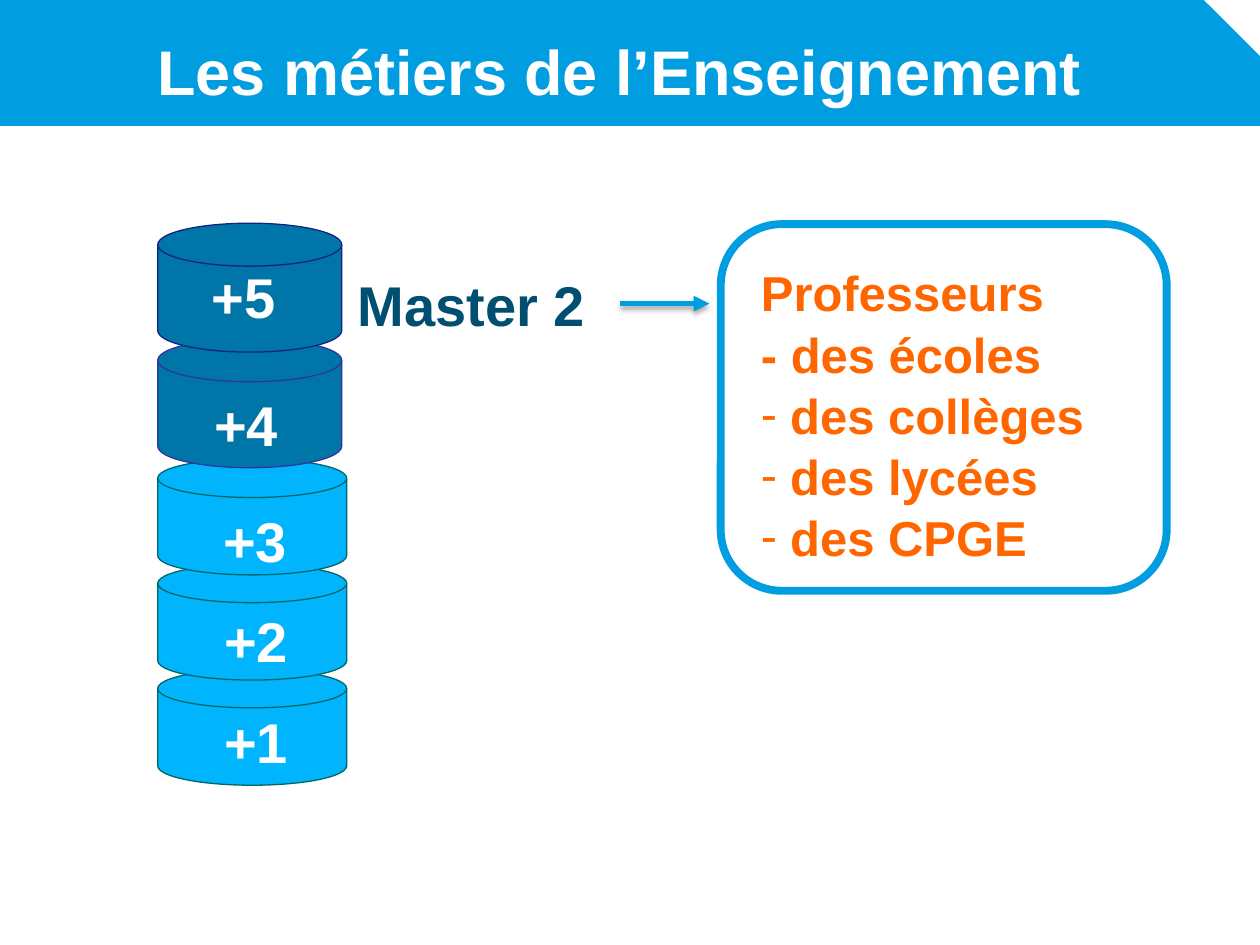
import pptx
import pptx.dml.color
import pptx.enum.shapes
import pptx.enum.text
import pptx.oxml
import pptx.oxml.ns
import pptx.util

Cm, Pt = pptx.util.Cm, pptx.util.Pt
SHAPE = pptx.enum.shapes.MSO_SHAPE
ALIGN = pptx.enum.text.PP_ALIGN

COLORS = {
    "banner": "009DE0", "white": "FFFFFF", "orange": "FF6600", "navy": "004F70",
    "licence": "00B5FE", "licence_line": "006666", "master": "0076A8",
    "m1_line": "333399", "m2_line": "14237B",
}

# label, width, height, top, fill, line, label offset x and y (cm), bottom disk first
LICENCE_STEP = 2.12
DISKS = [
    (f"+{i + 1}", 3.81, 2.34, 8.99 - i * LICENCE_STEP, "licence", "licence_line", dx, dy)
    for i, (dx, dy) in enumerate([(1.09, 0.64), (1.09, 0.74), (1.07, 0.84)])
] + [
    ("+4", 3.71, 2.6, 2.33, "master", "m1_line", 0.89, 0.91),
    ("+5", 3.71, 2.6, 0, "master", "m2_line", 0.84, 0.66),
]


def rgb(name):
    return pptx.dml.color.RGBColor.from_string(COLORS[name])


def xml(text):
    head, sep, rest = text.partition(" ")
    return pptx.oxml.parse_xml(f"{head} {pptx.oxml.ns.nsdecls('a')}{sep}{rest}")


def write(tf, text, size=32, color="white", align=ALIGN.LEFT, wrap=True,
          spacing=None, bullets_from=None):
    """Fill a text frame, one paragraph a line; bullets start at a line index."""
    tf.word_wrap = wrap
    tf.vertical_anchor = pptx.enum.text.MSO_ANCHOR.TOP
    for i, line in enumerate(text.split("\n")):
        p = tf.paragraphs[0] if i == 0 else tf.add_paragraph()
        p.alignment = align
        if spacing:
            p.line_spacing = spacing
        if bullets_from is not None and i >= bullets_from:
            pPr = p._p.get_or_add_pPr()
            pPr.set("marL", str(Cm(0.59)))
            pPr.set("indent", str(-Cm(0.59)))
            pPr.append(xml('<a:buFont typeface="Arial"/>'))
            pPr.append(xml('<a:buChar char="-"/>'))
        r = p.add_run()
        r.text = line
        r.font.name, r.font.size, r.font.bold = "Arial", Pt(size), True
        r.font.color.rgb = rgb(color)


def add_text(s, x, y, w, h, text, **fmt):
    tb = s.shapes.add_textbox(Cm(x), Cm(y), Cm(w), Cm(h))
    write(tb.text_frame, text, **fmt)


def add_shape(s, kind, x, y, w, h, fill=None, line=None, width=0.75):
    sp = s.shapes.add_shape(kind, Cm(x), Cm(y), Cm(w), Cm(h))
    sp.shadow.inherit = False
    if fill:
        sp.fill.solid()
        sp.fill.fore_color.rgb = rgb(fill)
    else:
        sp.fill.background()
    if line:
        sp.line.color.rgb = rgb(line)
        sp.line.width = Pt(width)
    else:
        sp.line.fill.background()
    return sp


def add_banner(s, x, y, w, h):
    sp = add_shape(s, SHAPE.SNIP_1_RECTANGLE, x, y, w, h, fill="banner")
    sp.adjustments[0] = 0.458
    title = s.shapes.title
    title.left, title.top = Cm(x + 0.33), Cm(y + 0.53)
    title.width, title.height = Cm(24.31), Cm(1.8)
    write(title.text_frame, "Les métiers de l’Enseignement", size=36, align=ALIGN.CENTER)
    sp._element.addnext(title._element)  # title in front of the banner


def add_levels(s, x, y):
    """Stack of study years, with its top left corner at x, y."""
    for label, w, h, top, fill, line, dx, dy in DISKS:
        add_shape(s, SHAPE.FLOWCHART_MAGNETIC_DISK, x, y + top, w, h, fill, line)
        add_text(s, x + dx, y + top + dy, 1.8, 1.63, label, wrap=False)


def add_diploma(s, x, y, w, h):
    """Diploma name, followed by an arrow to the careers."""
    add_text(s, x, y, w, h, "Master 2", color="navy")
    mid = Cm(y + 0.79)
    arrow = s.shapes.add_connector(
        pptx.enum.shapes.MSO_CONNECTOR.STRAIGHT, Cm(x + 5.54), mid, Cm(x + 7.34), mid)
    arrow.line.color.rgb = rgb("banner")
    arrow.line.width = Pt(3)
    arrow.line._get_or_add_ln().append(xml('<a:tailEnd type="triangle"/>'))
    effects = xml('<a:effectLst ></a:effectLst>')
    effects.append(xml(
        f'<a:outerShdw blurRad="{Pt(3.1)}" dist="{Pt(1.8)}" dir="5400000" rotWithShape="0">'
        '<a:srgbClr val="000000"><a:alpha val="35000"/></a:srgbClr></a:outerShdw>'))
    arrow._element.spPr.append(effects)


def add_careers(s, x, y, w, h):
    add_text(s, x + 0.56, y + 0.61, w - 0.56, h - 1.14,
             "Professeurs\n- des écoles\ndes collèges\ndes lycées\ndes CPGE",
             size=28, color="orange", spacing=1.04, bullets_from=2)
    add_shape(s, SHAPE.ROUNDED_RECTANGLE, x, y, w, h, line="banner", width=4.5)


def main():
    prs = pptx.Presentation()
    prs.slide_width, prs.slide_height = Cm(25.4), Cm(19.05)
    s = prs.slides.add_slide(prs.slide_layouts[5])
    add_banner(s, 0, 0, 25.43, 2.54)
    add_diploma(s, 6.96, 5.33, 5.92, 1.6)
    add_careers(s, 14.53, 4.52, 8.99, 7.39)
    add_levels(s, 3.18, 4.5)
    prs.save("out.pptx")


if __name__ == "__main__":
    main()
